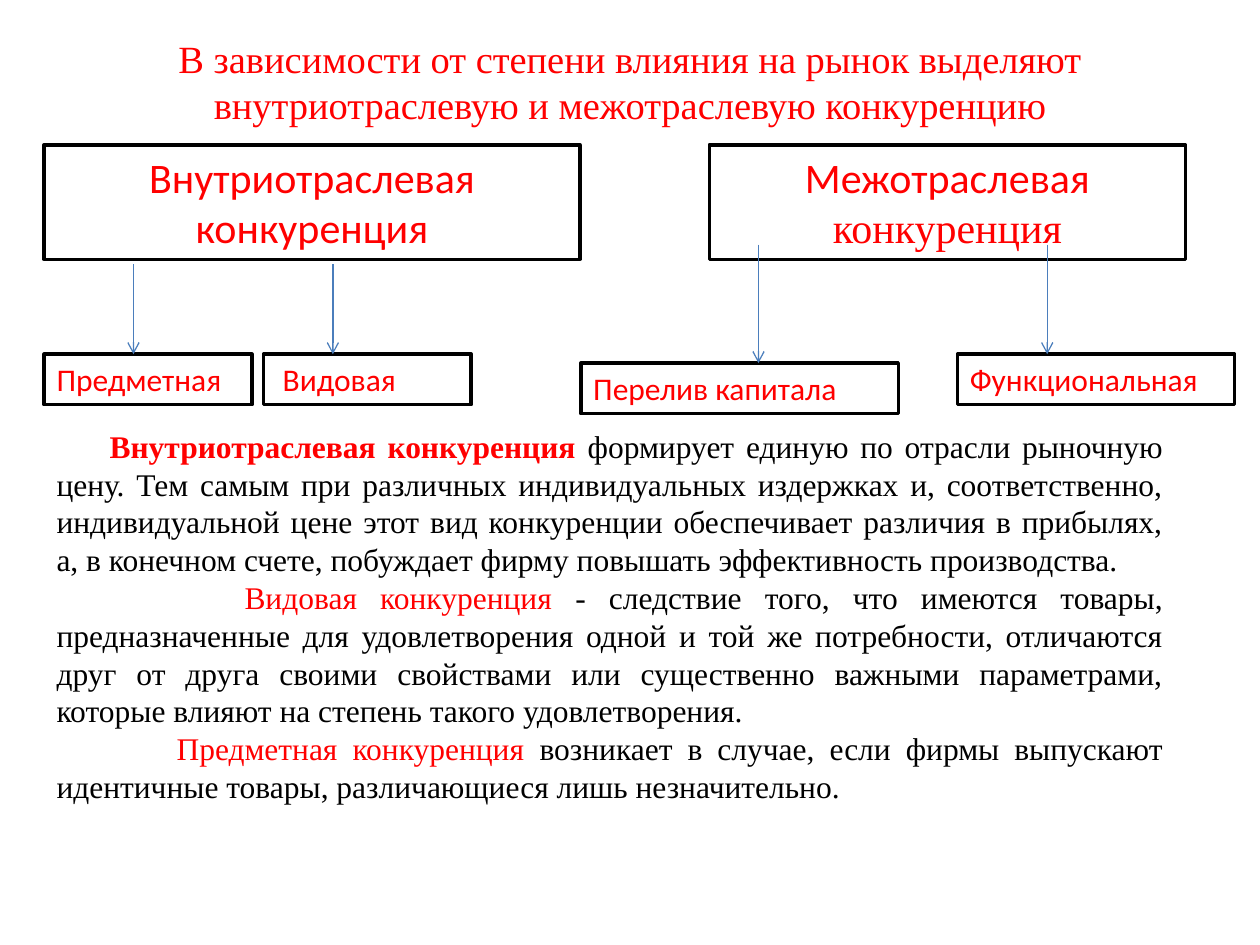
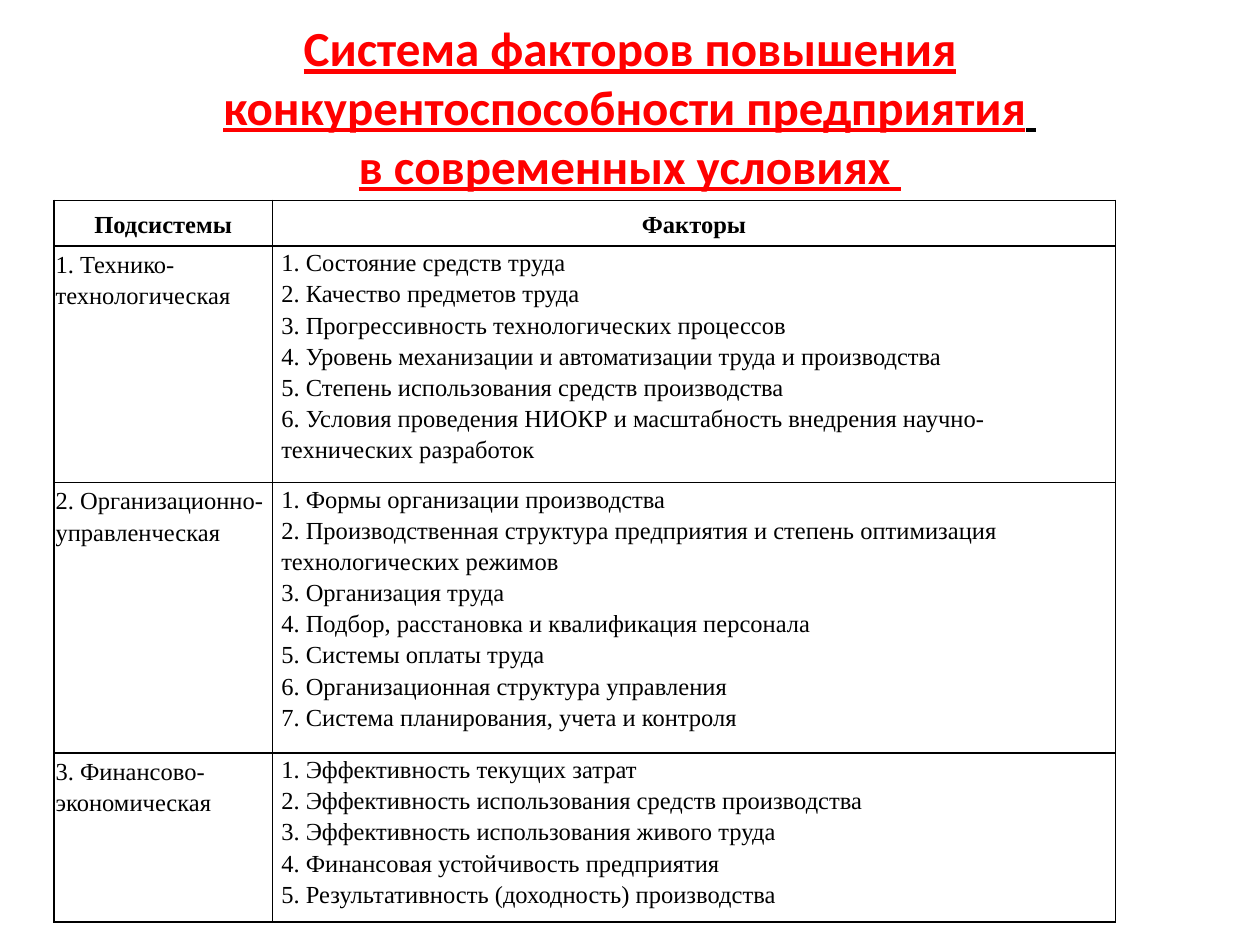
import pptx
import pptx.dml.color
import pptx.enum.shapes
import pptx.enum.text
import pptx.oxml
import pptx.oxml.ns
import pptx.util

Cm = pptx.util.Cm
Pt = pptx.util.Pt
ALIGN = pptx.enum.text.PP_ALIGN
ANCHOR = pptx.enum.text.MSO_ANCHOR

RED = pptx.dml.color.RGBColor(255, 0, 0)
BLACK = pptx.dml.color.RGBColor(0, 0, 0)
WHITE = pptx.dml.color.RGBColor(255, 255, 255)
BLUE = pptx.dml.color.RGBColor(0x4B, 0x7E, 0xBC)
SANS = "Calibri"
SERIF = "Times New Roman"

KINDS = [
    ("Предметная", 0.89, 7.14, 4.19, 0),
    ("Видовая", 5.31, 7.14, 4.19, 0.14),
    ("Перелив капитала", 11.71, 7.32, 6.4, 0),
    ("Функциональная", 19.3, 7.14, 5.59, 0),
]
ARROWS = [(2.69, 5.33, 7.14), (6.71, 5.33, 7.14), (15.29, 4.93, 7.32), (21.11, 4.93, 7.14)]

NOTES = [
    ("Внутриотраслевая конкуренция ",
     "формирует единую по отрасли рыночную цену. Тем самым при различных индивидуальных "
     "издержках и, соответственно, индивидуальной цене этот вид конкуренции обеспечивает "
     "различия в прибылях, а, в конечном счете, побуждает фирму повышать эффективность "
     "производства.", 1.07, True),
    ("Видовая конкуренция ",
     "- следствие того, что имеются товары, предназначенные для удовлетворения одной и той же "
     "потребности, отличаются друг от друга своими свойствами или существенно важными "
     "параметрами, которые влияют на степень такого удовлетворения.", 3.79, False),
    ("Предметная конкуренция ",
     "возникает в случае, если фирмы выпускают идентичные товары, различающиеся лишь "
     "незначительно.", 2.42, False),
]

HEADS = ("Подсистемы", "Факторы")
GROUPS = [
    ("Технико-технологическая", [
        "Состояние средств труда",
        "Качество предметов труда",
        "Прогрессивность технологических процессов",
        "Уровень механизации и автоматизации труда и производства",
        "Степень использования средств производства",
        "Условия проведения НИОКР и масштабность внедрения научно-технических разработок",
    ]),
    ("Организационно-управленческая", [
        "Формы организации производства",
        "Производственная структура предприятия и степень оптимизация технологических режимов",
        "Организация труда",
        "Подбор, расстановка и квалификация персонала",
        "Системы оплаты труда",
        "Организационная структура управления",
        "Система планирования, учета и контроля",
    ]),
    ("Финансово-экономическая", [
        "Эффективность текущих затрат",
        "Эффективность использования средств производства",
        "Эффективность использования живого труда",
        "Финансовая устойчивость предприятия",
        "Результативность (доходность) производства",
    ]),
]


def write(para, text, font=SERIF, size=18, color=BLACK, bold=False, under=False):
    """Add a formatted run to a paragraph."""
    run = para.add_run()
    run.text = text
    run.font.name = font
    run.font.size = Pt(size)
    run.font.color.rgb = color
    run.font.bold = bold
    run.font.underline = under


def number(items):
    """Number items from one."""
    return [f"{rank}. {item}" for rank, item in enumerate(items, 1)]


def indent(para, width):
    """Indent the first line of a paragraph."""
    props = para._p.get_or_add_pPr()
    props.set("marL", "0")
    props.set("indent", str(Cm(width)))


class Deck:
    """Hold the shared style and the current slide."""

    def __init__(self):
        self.show = pptx.Presentation()
        self.show.slide_width = Cm(25.4)
        self.show.slide_height = Cm(19.05)
        self.slide = None

    def page(self):
        """Start a blank slide."""
        self.slide = self.show.slides.add_slide(self.show.slide_layouts[6])

    def text(self, left, top, width, height, anchor=ANCHOR.TOP):
        """Add a wrapping text box and return its frame."""
        frame = self.slide.shapes.add_textbox(Cm(left), Cm(top), Cm(width), Cm(height)).text_frame
        frame.word_wrap = True
        frame.vertical_anchor = anchor
        return frame

    def title(self, top, height):
        """Add a centred title and return its paragraph."""
        para = self.text(1.27, top, 22.86, height, ANCHOR.MIDDLE).paragraphs[0]
        para.alignment = ALIGN.CENTER
        return para

    def box(self, left, top, width, height, align=ALIGN.LEFT):
        """Add a framed box and return its paragraph."""
        shape = self.slide.shapes.add_shape(
            pptx.enum.shapes.MSO_SHAPE.RECTANGLE, Cm(left), Cm(top), Cm(width), Cm(height))
        shape.shadow.inherit = False
        shape.fill.solid()
        shape.fill.fore_color.rgb = WHITE
        shape.line.color.rgb = BLACK
        shape.line.width = Pt(2)
        shape.text_frame.word_wrap = True
        shape.text_frame.vertical_anchor = ANCHOR.TOP
        para = shape.text_frame.paragraphs[0]
        para.alignment = align
        return para

    def arrow(self, left, top, end):
        """Add an arrow that points down."""
        line = self.slide.shapes.add_connector(
            pptx.enum.shapes.MSO_CONNECTOR.STRAIGHT, Cm(left), Cm(top), Cm(left), Cm(end))
        line.line.color.rgb = BLUE
        line.line.width = Pt(0.75)
        tail = pptx.oxml.parse_xml(f'<a:tailEnd {pptx.oxml.ns.nsdecls("a")} type="arrow"/>')
        line.line._get_or_add_ln().append(tail)
        none = pptx.oxml.parse_xml(f'<a:effectLst {pptx.oxml.ns.nsdecls("a")}/>')
        line._element.spPr.append(none)

    def cell(self, cell, lines, side, edge, head):
        """Fill one bordered table cell."""
        props = cell._tc.get_or_add_tcPr()
        for name in ("lnL", "lnR", "lnT", "lnB"):
            props.append(pptx.oxml.parse_xml(
                f'<a:{name} {pptx.oxml.ns.nsdecls("a")} w="{Pt(1)}"><a:solidFill>'
                f'<a:srgbClr val="{BLACK}"/></a:solidFill></a:{name}>'))
        cell.fill.solid()
        cell.fill.fore_color.rgb = WHITE
        cell.margin_left = cell.margin_right = Cm(side)
        cell.margin_top = cell.margin_bottom = Cm(edge)
        cell.vertical_anchor = ANCHOR.MIDDLE if head else ANCHOR.TOP
        for rank, line in enumerate(lines):
            para = cell.text_frame.add_paragraph() if rank else cell.text_frame.paragraphs[0]
            para.alignment = ALIGN.CENTER if head else ALIGN.LEFT
            para.line_spacing = 1.15
            write(para, line, size=14, bold=head)

    def table(self, left, top, cols, rows, data):
        """Add a table of cells, each a list of lines."""
        grid = self.slide.shapes.add_table(
            len(rows), len(cols), Cm(left), Cm(top), Cm(sum(cols)), Cm(sum(rows))).table
        grid.first_row = grid.horz_banding = False
        for col, width in zip(grid.columns, cols):
            col.width = Cm(width)
        for rank, (row, height) in enumerate(zip(grid.rows, rows)):
            row.height = Cm(height)
            for cell, lines, (side, edge) in zip(row.cells, data[rank], [(0.03, 0.03), (0.18, 0)]):
                self.cell(cell, lines, side, edge, rank == 0)


def types(deck):
    """Build the slide on types of competition."""
    deck.page()
    para = deck.title(0.76, 1.75)
    para.line_spacing = Pt(26.3)
    write(para, "В зависимости от степени влияния на рынок выделяют "
          "внутриотраслевую и межотраслевую конкуренцию", size=22, color=RED)

    para = deck.box(0.89, 2.92, 10.8, 2.31, ALIGN.CENTER)
    write(para, "Внутриотраслевая конкуренция", font=SANS, size=24, color=RED)
    para = deck.box(14.3, 2.92, 9.6, 2.31, ALIGN.CENTER)
    write(para, "Межотраслевая ", font=SANS, size=24, color=RED)
    write(para, "конкуренция", size=24, color=RED)

    for name, left, top, width, inset in KINDS:
        para = deck.box(left, top, width, 1.02)
        indent(para, inset)
        write(para, name, font=SANS, color=RED)
    for spot in ARROWS:
        deck.arrow(*spot)

    frame = deck.text(0.89, 8.48, 22.81, 8)
    for rank, (term, text, inset, bold) in enumerate(NOTES):
        para = frame.add_paragraph() if rank else frame.paragraphs[0]
        para.alignment = ALIGN.JUSTIFY
        para.line_spacing = Pt(21.6)
        indent(para, inset)
        write(para, term, color=RED, bold=bold)
        write(para, text)


def factors(deck):
    """Build the slide on factors of competitiveness."""
    deck.page()
    para = deck.title(0.53, 3.2)
    look = {"font": SANS, "size": 28, "under": True}
    write(para, "Система факторов повышения конкурентоспособности предприятия",
          color=RED, bold=True, **look)
    write(para, " ", **look)
    para.add_line_break()
    write(para, "в современных условиях ", color=RED, bold=True, **look)

    names = number(name for name, items in GROUPS)
    data = [[[head] for head in HEADS]]
    data += [[[name], number(items)] for name, (_, items) in zip(names, GROUPS)]
    deck.table(1.09, 4.04, [4.4, 17], [0.92, 4.75, 5.44, 3.39], data)


def main():
    """Build and save the deck."""
    deck = Deck()
    types(deck)
    factors(deck)
    deck.show.save("out.pptx")


if __name__ == "__main__":
    main()
